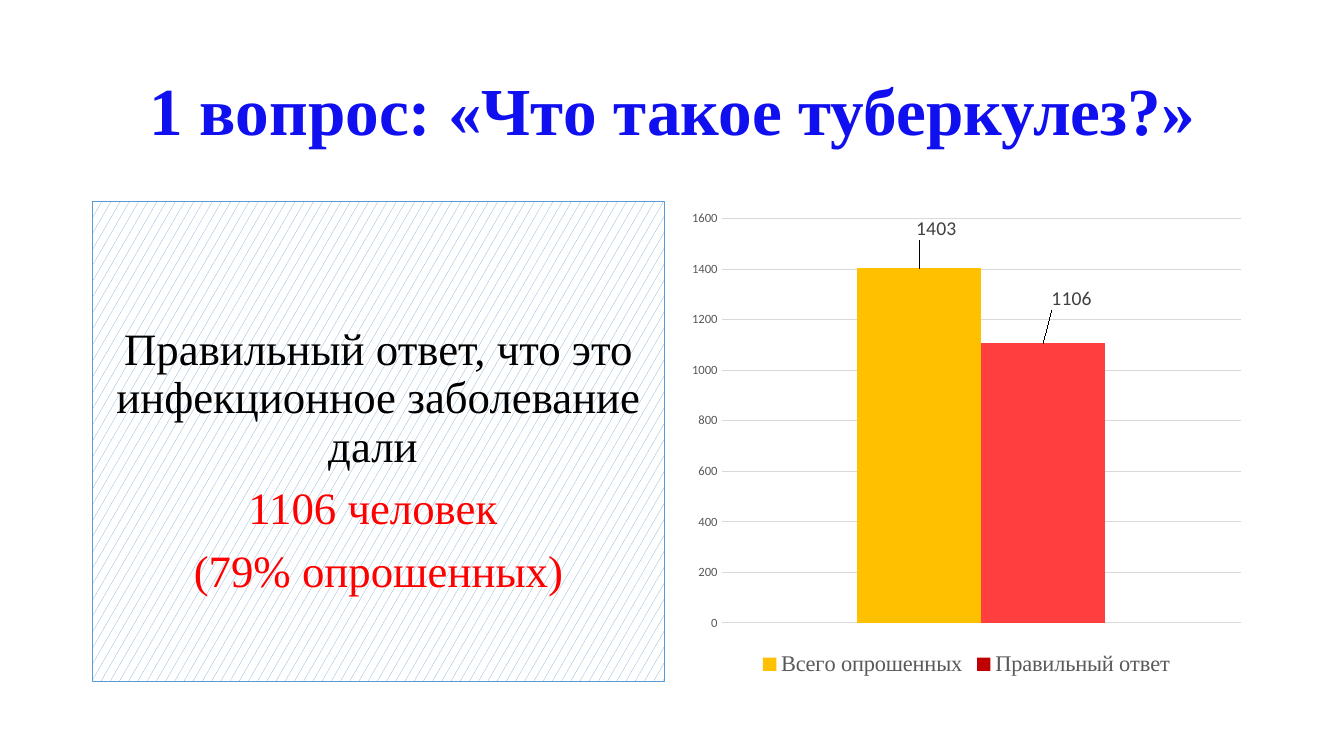
"""Build a survey slide with an answer panel and a column chart."""
from lxml import etree
from pptx import Presentation
from pptx.chart.data import CategoryChartData
from pptx.dml.color import RGBColor
from pptx.enum import chart as ch, dml, text
from pptx.oxml import ns
from pptx.util import Inches, Pt

TITLE = "1 вопрос: «Что такое туберкулез?»"
ANSWER = [
    ("Правильный ответ, что это инфекционное заболевание дали ", "ink"),
    ("1106 человек ", "red"),
    ("(79% опрошенных)", "red"),
]
SERIES = [
    dict(name="Всего опрошенных", value=1403, key="gold", bar="gold", shift=(0.03, -0.05)),
    dict(name="Правильный ответ", value=1106, key="wine", bar="coral", shift=(0.05, -0.06)),
]
THEME = dict(
    color=dict(title="0F0FEF", ink="000000", red="FF0000", blue="5B9BD5", white="FFFFFF",
               gold="FFC000", wine="C00000", coral="FF3F3F", gray="595959",
               dark="404040", grid="D9D9D9"),
    serif="Times New Roman", sans="Calibri",
    size=dict(title=48, body=32, chart=10, axis=9, label=14, legend=16),
)
LEFT, TOP, WIDE, HIGH, GAP = 0.92, 2, 5.67, 4.76, 0.16


def color(name):
    """Return a theme colour."""
    return RGBColor.from_string(THEME["color"][name])


def style(font, size, tone, face, **more):
    """Apply a type style to a font."""
    values = dict(size=Pt(THEME["size"][size]), name=THEME[face], **more)
    for key, value in values.items():
        setattr(font, key, value)
    font.color.rgb = color(tone)


def place(shape, *box):
    """Move and size a shape in inches."""
    for key, value in zip(("left", "top", "width", "height"), box):
        setattr(shape, key, Inches(value))


def write(frame, lines, size, anchor, **more):
    """Write centred paragraphs without bullets."""
    frame.auto_size = text.MSO_AUTO_SIZE.NONE
    frame.vertical_anchor = anchor
    for i, (words, tone) in enumerate(lines):
        para = frame.add_paragraph() if i else frame.paragraphs[0]
        form = dict(alignment=text.PP_ALIGN.CENTER, line_spacing=0.9,
                    space_before=Pt(10 if i else 0))
        for key, value in form.items():
            setattr(para, key, value)
        props = para._p.get_or_add_pPr()
        for key in ("marL", "indent"):
            props.set(key, "0")
        etree.SubElement(props, ns.qn("a:buNone"))
        run = para.add_run()
        run.text = words
        style(run.font, size, tone, "serif", **more)


def panel(body):
    """Format the answer panel."""
    place(body, LEFT, TOP, WIDE, HIGH)
    fill = body.fill
    fill.patterned()
    fill.pattern = dml.MSO_PATTERN.SMALL_CONFETTI
    fill.fore_color.rgb, fill.back_color.rgb = color("blue"), color("white")
    body.line.color.rgb, body.line.width = color("blue"), Pt(0.75)
    write(body.text_frame, ANSWER, "body", text.MSO_ANCHOR.TOP)
    body.text_frame.margin_top = Inches(1.24)


def shift(label, offset):
    """Nudge a data label by fractions of the chart."""
    layout = etree.Element(ns.qn("c:layout"))
    manual = etree.SubElement(layout, ns.qn("c:manualLayout"))
    for axis, value in zip("xy", offset):
        etree.SubElement(manual, ns.qn("c:" + axis)).set("val", str(value))
    label.insert(1, layout)


def graph(slide):
    """Add the column chart."""
    data = CategoryChartData()
    data.categories = ["1"]
    for row in SERIES:
        data.add_series(row["name"], [row["value"]])
    box = [Inches(v) for v in (LEFT + WIDE + GAP, TOP, WIDE, HIGH)]
    chart = slide.shapes.add_chart(ch.XL_CHART_TYPE.COLUMN_CLUSTERED, *box, data).chart
    style(chart.font, "chart", "ink", "sans")
    chart.has_title = False
    chart.has_legend = True
    chart.legend.position = ch.XL_LEGEND_POSITION.BOTTOM
    chart.legend.include_in_layout = False
    style(chart.legend.font, "legend", "gray", "serif")

    chart.category_axis.visible = False
    axis = chart.value_axis
    form = dict(minimum_scale=0, maximum_scale=1600, major_unit=200,
                has_major_gridlines=True, major_tick_mark=ch.XL_TICK_MARK.NONE,
                minor_tick_mark=ch.XL_TICK_MARK.NONE)
    for key, value in form.items():
        setattr(axis, key, value)
    axis.format.line.fill.background()
    grid = axis.major_gridlines.format.line
    grid.color.rgb, grid.width = color("grid"), Pt(0.75)
    style(axis.tick_labels.font, "axis", "gray", "sans")

    plot = chart.plots[0]
    plot.gap_width, plot.overlap, plot.vary_by_categories = 219, 0, False
    for row, series in zip(SERIES, plot.series):
        labels, point = series.data_labels, series.points[0]
        labels.show_value = True
        for part, tone in ((series, "key"), (point, "bar")):
            part.format.fill.solid()
            part.format.fill.fore_color.rgb = color(row[tone])
        for part in (labels, point.data_label):
            part.position = ch.XL_LABEL_POSITION.OUTSIDE_END
            style(part.font, "label", "dark", "sans")
        shift(series._element.xpath(".//c:dLbl")[0], row["shift"])


def main():
    """Build and save the slide."""
    deck = Presentation()
    deck.slide_width, deck.slide_height = Inches(13.33), Inches(7.5)
    slide = deck.slides.add_slide(deck.slide_layouts[1])
    title, body = slide.placeholders
    place(title, LEFT, 0.4, 11.5, 1.45)
    write(title.text_frame, [(TITLE, "title")], "title", text.MSO_ANCHOR.MIDDLE, bold=True)
    panel(body)
    graph(slide)
    deck.save("out.pptx")


if __name__ == "__main__":
    main()
